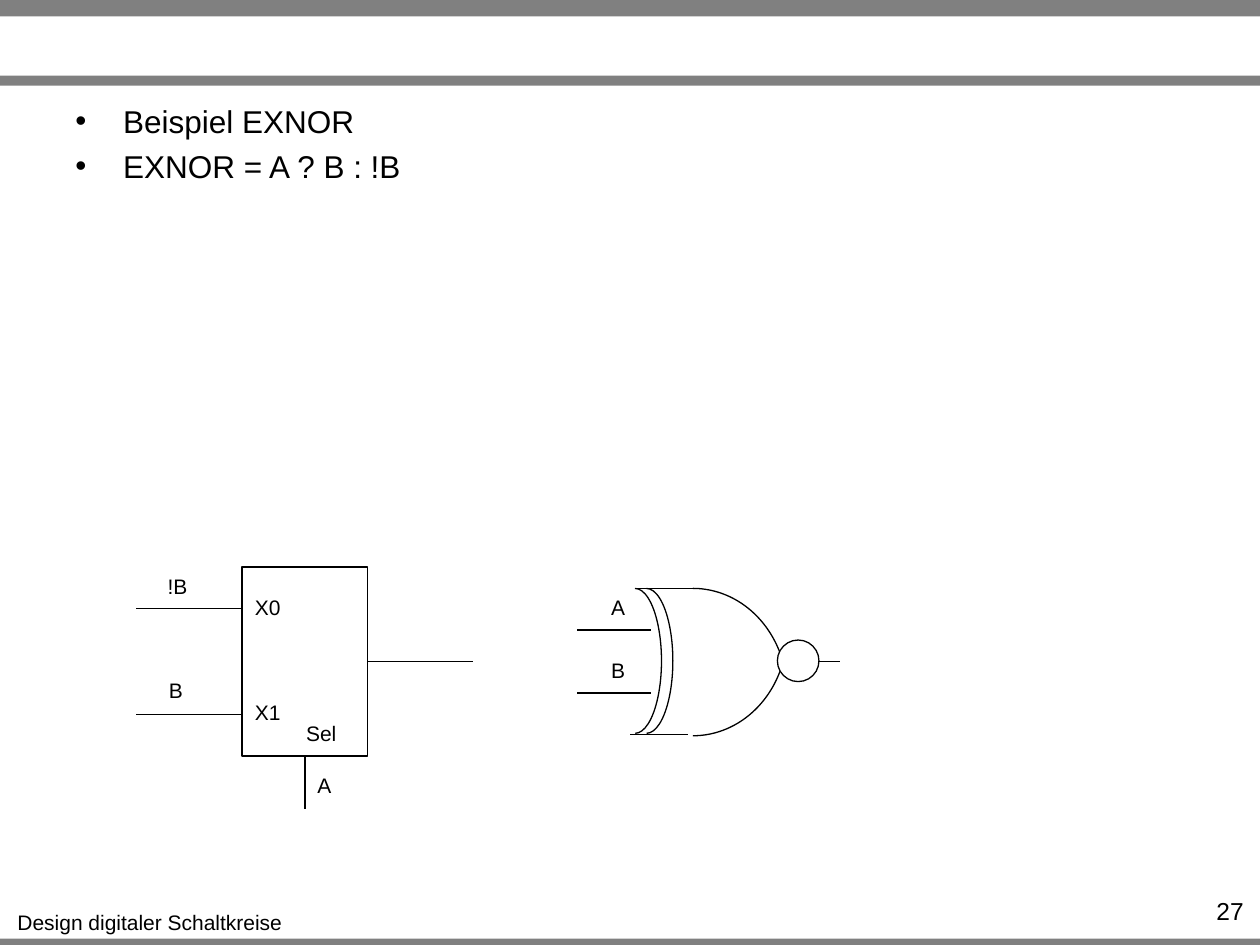
from pptx import Presentation
from pptx.util import Inches, Pt
from pptx.dml.color import RGBColor
from pptx.enum.shapes import MSO_SHAPE, MSO_CONNECTOR
from pptx.enum.text import PP_ALIGN, MSO_AUTO_SIZE
from pptx.oxml.ns import qn
from lxml.etree import SubElement

COLORS = {"ink": "000000", "bar": "808080", "paper": "FFFFFF"}


def tint(name):
    return RGBColor.from_string(COLORS[name])


class Sketch:
    font = {"name": "Arial", "bold": False}
    width = Pt(0.75)

    def __init__(self, slide):
        self.shapes = slide.shapes

    def form(self, kind, box, fill=None, line="ink"):
        shape = self.shapes.add_shape(kind, *map(Inches, box))
        shape.shadow.inherit = False
        if fill:
            shape.fill.solid()
            shape.fill.fore_color.rgb = tint(fill)
        else:
            shape.fill.background()
        if line:
            shape.line.color.rgb = tint(line)
            shape.line.width = self.width
        else:
            shape.line.fill.background()
        return shape

    def bar(self, top, height):
        self.form(MSO_SHAPE.RECTANGLE, (0, top, 10, height), "bar", None)

    def arc(self, box, end, flip=False):
        shape = self.form(MSO_SHAPE.ARC, box)
        shape.adjustments[0] = 162
        shape.adjustments[1] = end
        if flip:
            shape._element.spPr.find(qn("a:xfrm")).set("flipV", "1")

    def wire(self, *ends):
        line = self.shapes.add_connector(MSO_CONNECTOR.STRAIGHT, *map(Inches, ends))
        line.line.color.rgb = tint("ink")
        line.line.width = self.width
        SubElement(line._element.spPr, qn("a:effectLst"))

    def style(self, para, size):
        for key, value in {**self.font, "size": Pt(size)}.items():
            setattr(para.font, key, value)
        para.font.color.rgb = tint("ink")

    def text(self, words, box, size=12, align=PP_ALIGN.CENTER, wrap=False):
        frame = self.shapes.add_textbox(*map(Inches, box)).text_frame
        frame.word_wrap = wrap
        frame.auto_size = MSO_AUTO_SIZE.NONE if wrap else MSO_AUTO_SIZE.SHAPE_TO_FIT_TEXT
        para = frame.paragraphs[0]
        para.text = words
        para.alignment = align
        self.style(para, size)

    def list(self, items, box, size):
        frame = self.shapes.add_textbox(*map(Inches, box)).text_frame
        frame.word_wrap = True
        for rank, item in enumerate(items):
            para = frame.add_paragraph() if rank else frame.paragraphs[0]
            para.text = item
            para.space_before = Pt(4 if rank else 0)
            props = para._p.get_or_add_pPr()
            props.set("marL", str(Inches(0.38)))
            props.set("indent", str(Inches(-0.38)))
            SubElement(props, qn("a:buFont")).set("typeface", "Arial")
            SubElement(props, qn("a:buChar")).set("char", "•")
            self.style(para, size)

    def group(self):
        self.shapes = self.shapes.add_group_shape().shapes


def frame(pen):
    for top, height in ((7.45, 0.08), (0, 0.13), (0.6, 0.08)):
        pen.bar(top, height)
    pen.text("Design digitaler Schaltkreise", (0.03, 7.17, 2.32, 0.3))
    pen.list(["Beispiel EXNOR", "EXNOR = A ? B : !B"], (0.5, 0.76, 9, 0.74), 18)
    pen.text("27", (9.1, 7.06, 0.87, 0.24), 14, PP_ALIGN.RIGHT, True)


def mux(pen):
    pen.form(MSO_SHAPE.RECTANGLE, (1.92, 4.5, 1, 1.5))
    for y in (4.83, 5.67):
        pen.wire(1.08, y, 1.92, y)
    pen.wire(2.92, 5.25, 3.75, 5.25)
    pen.wire(2.42, 6.42, 2.42, 6)
    for words, x, y, wide in (
        ("X0", 1.92, 4.67, 0.41),
        ("X1", 1.92, 5.5, 0.41),
        ("Sel", 2.33, 5.67, 0.44),
        ("A", 2.42, 6.08, 0.31),
        ("!B", 1.23, 4.5, 0.36),
        ("B", 1.24, 5.33, 0.31),
    ):
        pen.text(words, (x, y, wide, 0.3))


def gate(pen):
    pen.group()
    for words, y in (("A", 5), ("B", 5.5)):
        pen.wire(4.58, y, 5.17, y)
        pen.text(words, (4.75, y - 0.33, 0.31, 0.3))
    for x in (4.83, 4.92):
        pen.arc((x, 4.67, 0.42, 1.15), 53.88)
    for y, flip in ((4.67, False), (4.17, True)):
        pen.arc((4.75, y, 1.5, 1.67), 201.69, flip)
    pen.wire(5.5, 4.67, 5.04, 4.67)
    pen.wire(5.46, 5.83, 5, 5.83)
    pen.form(MSO_SHAPE.OVAL, (6.17, 5.08, 0.33, 0.33), "paper")
    pen.wire(6.5, 5.25, 6.67, 5.25)


def main():
    deck = Presentation()
    deck.slide_width, deck.slide_height = Inches(10), Inches(7.5)
    pen = Sketch(deck.slides.add_slide(deck.slide_layouts[6]))
    for draw in (frame, mux, gate):
        draw(pen)
    deck.save("out.pptx")


if __name__ == "__main__":
    main()
